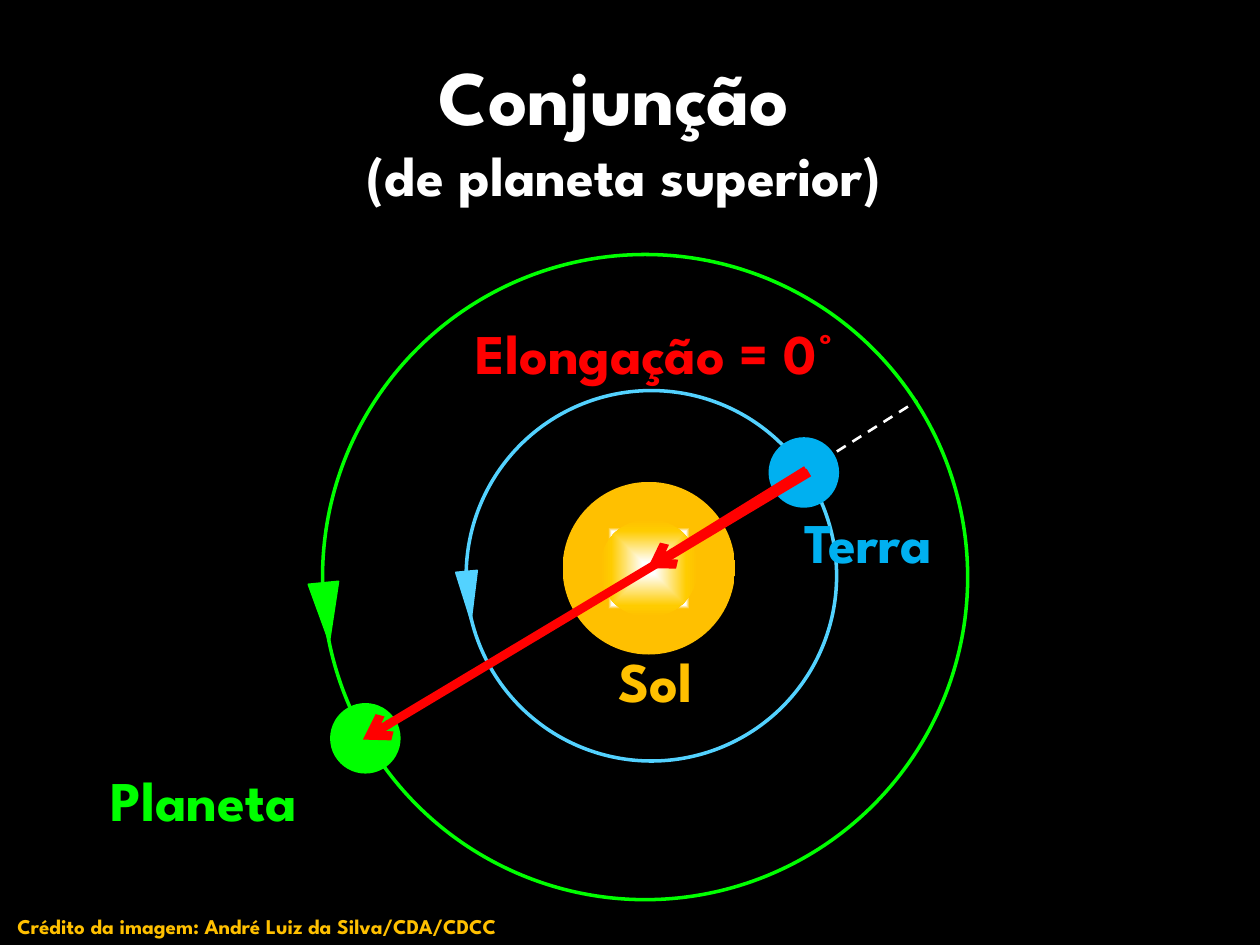
from lxml import etree
from pptx import Presentation
from pptx.dml.color import RGBColor
from pptx.enum.dml import MSO_LINE
from pptx.enum.shapes import MSO_CONNECTOR, MSO_SHAPE
from pptx.enum.text import MSO_ANCHOR, PP_ALIGN
from pptx.oxml.ns import qn
from pptx.util import Inches, Pt

FONT = "League Spartan"
BLACK = RGBColor(0x00, 0x00, 0x00)
WHITE = RGBColor(0xFF, 0xFF, 0xFF)
RED = RGBColor(0xFF, 0x00, 0x00)
GREEN = RGBColor(0x00, 0xFF, 0x00)
EARTH_BLUE = RGBColor(0x00, 0xB0, 0xF0)
ORBIT_BLUE = RGBColor(0x53, 0xD2, 0xFF)
GOLD = RGBColor(0xFF, 0xC0, 0x00)
YELLOW = RGBColor(0xFF, 0xCC, 0x00)


def add_text(s, box, lines, color, align=PP_ALIGN.CENTER, anchor=MSO_ANCHOR.TOP):
    """Write (text, size) lines into one paragraph, separated by line breaks."""
    tf = s.shapes.add_textbox(*(Inches(v) for v in box)).text_frame
    tf.word_wrap = True
    tf.vertical_anchor = anchor
    p = tf.paragraphs[0]
    p.alignment = align
    for i, (text, size) in enumerate(lines):
        if i:
            p.add_line_break()
        r = p.add_run()
        r.text = text
        r.font.name, r.font.size, r.font.bold = FONT, Pt(size), True
        r.font.color.rgb = color


def centred(cx, cy, w, h):
    return cx - w / 2, cy - h / 2, w, h


def add_figure(s, kind, box, fill=None, line=None, weight=1, rotation=0):
    sp = s.shapes.add_shape(kind, *(Inches(v) for v in box))
    sp.shadow.inherit = False
    sp.rotation = rotation
    if fill is None:
        sp.fill.background()
    else:
        sp.fill.solid()
        sp.fill.fore_color.rgb = fill
    if line is None:
        sp.line.fill.background()
    else:
        sp.line.color.rgb = line
        sp.line.width = Pt(weight)
    return sp


def set_glow(sp, stops):
    """Fill with a gradient from the centre; stops are (percent, colour, alpha)."""
    sp.fill.gradient()
    grad = sp.fill._xPr.find(qn("a:gradFill"))
    for child in list(grad):
        grad.remove(child)
    stop_list = etree.SubElement(grad, qn("a:gsLst"))
    for pos, color, alpha in stops:
        gs = etree.SubElement(stop_list, qn("a:gs"), pos=str(pos * 1000))
        clr = etree.SubElement(gs, qn("a:srgbClr"), val=str(color))
        if alpha < 100:
            etree.SubElement(clr, qn("a:alpha"), val=str(alpha * 1000))
    shade = etree.SubElement(grad, qn("a:path"), {"path": "shape"})
    etree.SubElement(shade, qn("a:fillToRect"),
                     {side: "50000" for side in "ltrb"})


def add_line(s, start, end, color, weight, dash=None, arrow=False):
    cn = s.shapes.add_connector(MSO_CONNECTOR.STRAIGHT,
                                *(Inches(v) for v in (*start, *end)))
    cn.line.color.rgb = color
    cn.line.width = Pt(weight)
    if dash:
        cn.line.dash_style = dash
    if arrow:
        etree.SubElement(cn.line._get_or_add_ln(), qn("a:tailEnd"), type="arrow")
    etree.SubElement(cn._element.spPr, qn("a:effectLst"))


def add_title(s, box):
    add_text(s, box, [("Conjunção ", 44), ("(de planeta superior)", 32)],
             WHITE, anchor=MSO_ANCHOR.MIDDLE)


def add_diagram(s, box):
    """Draw the orbits; offsets are measured from the centre of the outer orbit."""
    left, top, w, h = box

    def at(dx, dy):
        return left + w / 2 + dx, top + h / 2 + dy

    def circle(offset, d, **style):
        return add_figure(s, MSO_SHAPE.OVAL, centred(*at(*offset), d, d), **style)

    # Sun
    sun = (0.03, -0.07)
    set_glow(circle(sun, 1.37),
             [(43, WHITE, 100), (47, GOLD, 100), (100, GOLD, 0)])
    set_glow(circle(sun, 0.78),
             [(12, WHITE, 100), (76, YELLOW, 100), (100, GOLD, 100)])

    # Sight line beyond the Earth, then orbits and planets
    add_line(s, at(0.04, -0.06), at(2.16, -1.4), WHITE, 1.5, dash=MSO_LINE.DASH)
    circle((0, 0), w, line=GREEN, weight=2)
    circle((0.05, -0.01), 2.94, line=ORBIT_BLUE, weight=2)
    circle((1.26, -0.83), 0.56, fill=EARTH_BLUE)
    circle((-2.22, 1.28), 0.56, fill=GREEN)

    # Labels
    for text, offset, width, color in (
        ("Sol", (0.08, 0.82), 1.02, GOLD),
        ("Terra", (1.77, -0.28), 1.42, EARTH_BLUE),
        ("Planeta", (-3.5, 1.77), 2.05, GREEN),
        ("Elongação = 0°", (0.08, -1.78), 4.17, RED),
    ):
        add_text(s, centred(*at(*offset), width, 0.64), [(text, 32)], color)

    # Arrows from the Earth to the Sun and to the planet
    add_line(s, at(1.28, -0.85), at(0.02, -0.07), RED, 5, arrow=True)
    add_line(s, at(1.3, -0.83), at(-2.24, 1.29), RED, 5, arrow=True)

    # Direction of motion
    for offset, size, rotation, color in (
        ((-2.53, 0.28), (0.24, 0.47), 174.3, GREEN),
        ((-1.4, 0.15), (0.17, 0.39), 174.8, ORBIT_BLUE),
    ):
        add_figure(s, MSO_SHAPE.ISOSCELES_TRIANGLE, centred(*at(*offset), *size),
                   fill=color, line=color, rotation=rotation)


def add_credit(s, box):
    add_text(s, box, [("Crédito da imagem: André Luiz da Silva/CDA/CDCC", 12)],
             GOLD, align=PP_ALIGN.LEFT)


def main():
    prs = Presentation()
    prs.slide_width, prs.slide_height = Inches(10), Inches(7.5)
    s = prs.slides.add_slide(prs.slide_layouts[6])
    s.background.fill.solid()
    s.background.fill.fore_color.rgb = BLACK
    add_title(s, (0.35, 0.21, 9.21, 1.61))
    add_diagram(s, (2.56, 2.02, 5.12, 5.12))
    add_credit(s, (0.04, 7.2, 5.28, 0.3))
    prs.save("out.pptx")


if __name__ == "__main__":
    main()
